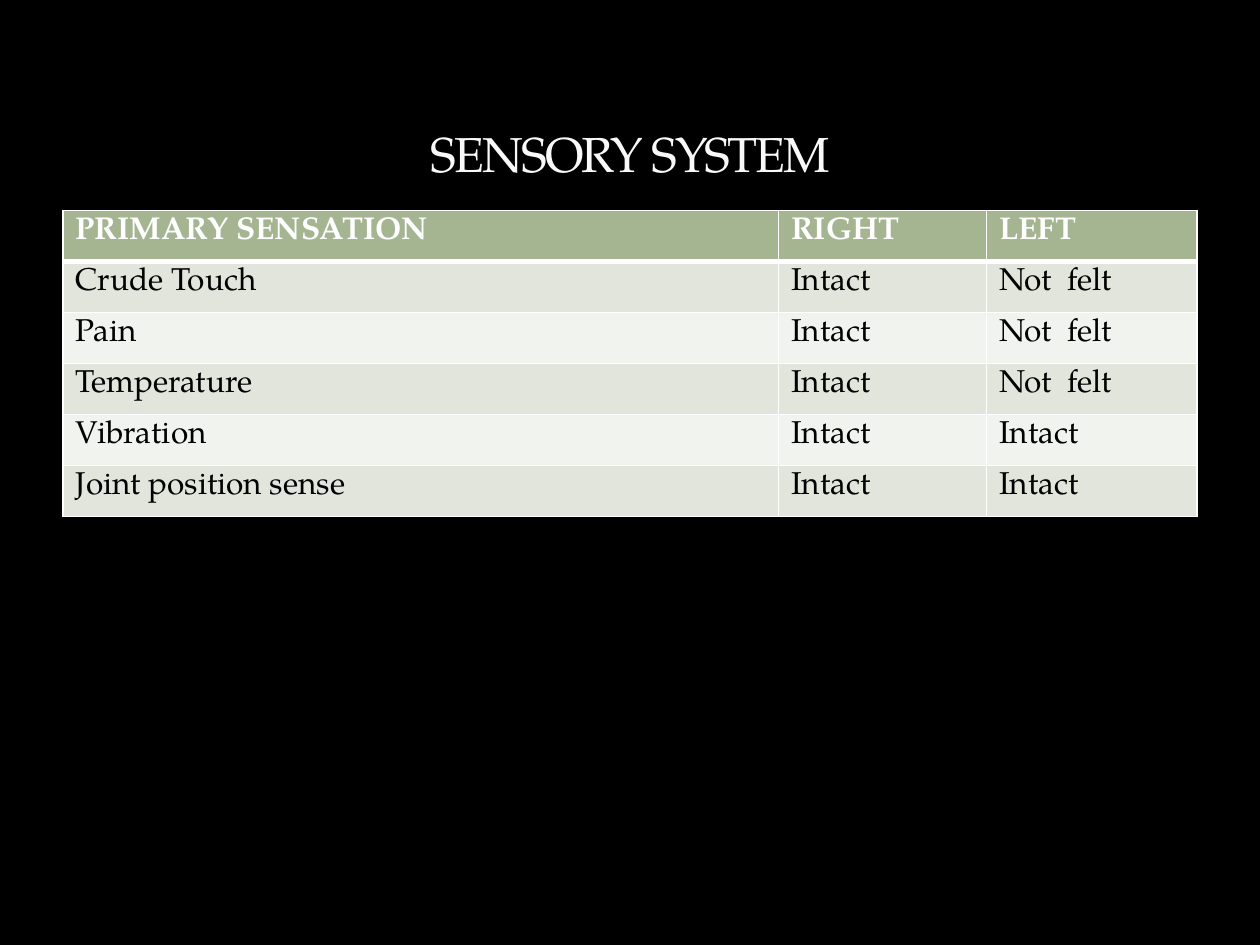
from lxml import etree
from pptx import Presentation
from pptx.dml.color import RGBColor
from pptx.enum import text
from pptx.oxml import parse_xml
from pptx.oxml.ns import nsdecls, qn
from pptx.util import Inches, Pt

TITLE = "SENSORY SYSTEM"
HEADER = ("PRIMARY SENSATION", "RIGHT", "LEFT")
FINDINGS = [
    ("Crude Touch", "Intact", "Not  felt"),
    ("Pain", "Intact", "Not  felt"),
    ("Temperature", "Intact", "Not  felt"),
    ("Vibration", "Intact", "Intact"),
    ("Joint position sense", "Intact", "Intact"),
]
COLUMN_WIDTHS = (5.68, 1.65, 1.67)
ROW_HEIGHT = 0.405
FONT = "TeX Gyre Pagella"
COLORS = {
    "background": "000000",
    "title": "F9F9F9",
    "title_outline": "3C4422",
    "header": "A5B592",
    "odd_row": "E1E5DC",
    "even_row": "F0F3EE",
    "border": "FFFFFF",
    "header_text": "FFFFFF",
    "body_text": "000000",
}


def rgb(name):
    return RGBColor.from_string(COLORS[name])


def write(frame, words, size, color, bold=False, align=None):
    paragraph = frame.paragraphs[0]
    paragraph.alignment = align
    run = paragraph.add_run()
    run.text = words
    run.font.name = FONT
    run.font.size = Pt(size)
    run.font.bold = bold
    run.font.color.rgb = rgb(color)
    return run


def set_borders(cell, bottom=1):
    """Draw all four sides 1 pt wide, the bottom one as given."""
    properties = cell._tc.get_or_add_tcPr()
    widths = {"L": 1, "R": 1, "T": 1, "B": bottom}
    for position, (side, width) in enumerate(widths.items()):
        line = etree.Element(qn(f"a:ln{side}"), w=str(Pt(width)))
        fill = etree.SubElement(line, qn("a:solidFill"))
        etree.SubElement(fill, qn("a:srgbClr"), val=COLORS["border"])
        properties.insert(position, line)


def add_title(slide):
    title = slide.shapes.title
    title.left, title.top = Inches(0.5), Inches(0.17)
    title.width, title.height = Inches(9), Inches(1.33)
    title.text_frame.vertical_anchor = text.MSO_ANCHOR.BOTTOM
    run = write(title.text_frame, TITLE, 28, "title", align=text.PP_ALIGN.CENTER)
    properties = run.font._element
    properties.set("spc", "-100")
    properties.insert(0, parse_xml(
        f'<a:ln {nsdecls("a")} w="{Pt(0.25)}"><a:solidFill>'
        f'<a:srgbClr val="{COLORS["title_outline"]}"><a:alpha val="25000"/></a:srgbClr>'
        '</a:solidFill></a:ln>'))


def add_findings(slide):
    rows = [HEADER, *FINDINGS]
    table = slide.shapes.add_table(
        len(rows), len(HEADER), Inches(0.5), Inches(1.67),
        Inches(sum(COLUMN_WIDTHS)), Inches(ROW_HEIGHT * len(rows))).table
    for column, width in zip(table.columns, COLUMN_WIDTHS):
        column.width = Inches(width)
    for r, row in enumerate(rows):
        is_header = r == 0
        fill = "header" if is_header else "odd_row" if r % 2 else "even_row"
        color = "header_text" if is_header else "body_text"
        for c, words in enumerate(row):
            cell = table.cell(r, c)
            cell.fill.solid()
            cell.fill.fore_color.rgb = rgb(fill)
            set_borders(cell, bottom=3 if is_header else 1)
            write(cell.text_frame, words, 18, color, bold=is_header)
    for c in range(len(HEADER)):
        top = table.cell(1, c)._tc.tcPr.find(qn("a:lnT"))
        top.set("w", str(Pt(3)))


def main():
    deck = Presentation()
    deck.slide_width, deck.slide_height = Inches(10), Inches(7.5)
    slide = deck.slides.add_slide(deck.slide_layouts[5])
    slide.background.fill.solid()
    slide.background.fill.fore_color.rgb = rgb("background")
    add_findings(slide)
    add_title(slide)
    deck.save("out.pptx")


if __name__ == "__main__":
    main()
